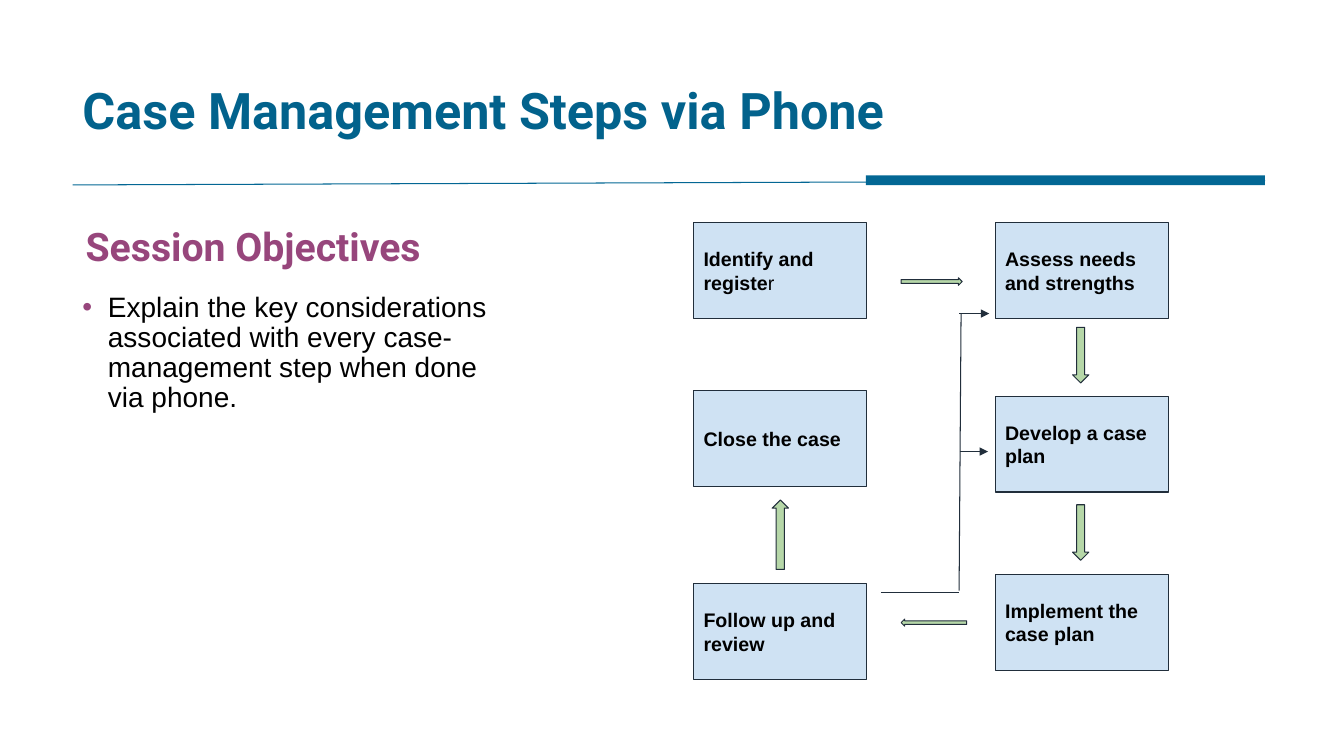
from lxml import etree
from pptx import Presentation
from pptx.dml.color import RGBColor
from pptx.enum.shapes import MSO_CONNECTOR, MSO_SHAPE
from pptx.enum.text import MSO_ANCHOR, PP_ALIGN
from pptx.oxml.ns import qn
from pptx.util import Cm, Pt

TEAL = RGBColor(0x02, 0x62, 0x8C)
BLUE = RGBColor(0x03, 0x67, 0x94)
PLUM = RGBColor(0x97, 0x46, 0x7C)
BLACK = RGBColor(0, 0, 0)
PALE = RGBColor(0xCF, 0xE2, 0xF3)
GREEN = RGBColor(0xB6, 0xD7, 0xA8)
INK = RGBColor(0x21, 0x2E, 0x3B)
RECT = MSO_SHAPE.RECTANGLE
RIGHT = MSO_SHAPE.RIGHT_ARROW
LEFT = MSO_SHAPE.LEFT_ARROW
UP = MSO_SHAPE.UP_ARROW
DOWN = MSO_SHAPE.DOWN_ARROW
STRAIGHT = MSO_CONNECTOR.STRAIGHT
TOP = MSO_ANCHOR.TOP
MIDDLE = MSO_ANCHOR.MIDDLE
ALIGN = PP_ALIGN.LEFT


def add_run(para, text, size, color, font="Arial", bold=False):
    run = para.add_run()
    run.text = text
    run.font.name = font
    run.font.size = Pt(size)
    run.font.bold = bold
    run.font.color.rgb = color


def add_text(slide, x, y, w, h, anchor=TOP):
    """Add a text box and return its first paragraph."""
    frame = slide.shapes.add_textbox(Cm(x), Cm(y), Cm(w), Cm(h)).text_frame
    frame.word_wrap = True
    frame.vertical_anchor = anchor
    para = frame.paragraphs[0]
    para.line_spacing = 0.9
    return para


def add_shape(slide, kind, x, y, w, h, fill, edge=None):
    shape = slide.shapes.add_shape(kind, Cm(x), Cm(y), Cm(w), Cm(h))
    shape.shadow.inherit = False
    shape.fill.solid()
    shape.fill.fore_color.rgb = fill
    if edge is None:
        shape.line.fill.background()
    else:
        shape.line.color.rgb = edge
        shape.line.width = Pt(0.75)
    return shape


def add_line(slide, x1, y1, x2, y2, color, arrow=False):
    line = slide.shapes.add_connector(STRAIGHT, Cm(x1), Cm(y1), Cm(x2), Cm(y2))
    line.line.color.rgb = color
    line.line.width = Pt(0.75)
    if arrow:
        tail = etree.SubElement(line.line._get_or_add_ln(), qn("a:tailEnd"))
        tail.set("type", "triangle")
    etree.SubElement(line._element.spPr, qn("a:effectLst"))


def add_head(slide, x, y, w, h):
    # Rule with a heavy right end
    add_line(slide, x, y + h - 0.04, x + w, y + h - 0.15, BLUE)
    bar = 10.06
    add_shape(slide, RECT, x + w - bar, y + h - 0.28, bar, 0.25, BLUE)
    # Title
    para = add_text(slide, x, y, w, h, MIDDLE)
    add_run(para, "Case Management Steps via Phone", 36, TEAL, "Roboto", True)


def add_goals(slide, x, y, w, h):
    # Heading
    para = add_text(slide, x + 0.08, y, w, 1.4)
    add_run(para, "Session Objectives", 28, PLUM, "Roboto", True)
    # Bullet
    para = add_text(slide, x, y + 1.65, w, h - 1.65)
    props = para._p.get_or_add_pPr()
    props.set("marL", str(Cm(0.64)))
    props.set("indent", str(-Cm(0.64)))
    tint = etree.SubElement(props, qn("a:buClr"))
    etree.SubElement(tint, qn("a:srgbClr")).set("val", str(PLUM))
    etree.SubElement(props, qn("a:buFont")).set("typeface", "Arial")
    etree.SubElement(props, qn("a:buChar")).set("char", "•")
    add_run(para, "Explain the key considerations associated with every "
            "case-management step when done via phone.", 20, BLACK)


def add_step(slide, x, y, w, h, bold, plain=""):
    frame = add_shape(slide, RECT, x, y, w, h, PALE, INK).text_frame
    frame.word_wrap = True
    frame.vertical_anchor = MIDDLE
    frame.margin_left = frame.margin_right = Cm(0.25)
    frame.margin_top = frame.margin_bottom = Cm(0.25)
    para = frame.paragraphs[0]
    para.alignment = ALIGN
    add_run(para, bold, 14, BLACK, bold=True)
    if plain:
        add_run(para, plain, 14, BLACK)


def add_flow(slide, x, y, w, h):
    # Steps, column by column
    wide, high = 4.36, 2.42
    cols = (
        (0, ((0, "Identify and registe", "r"),
             (4.23, "Close the case"),
             (h - high, "Follow up and review"))),
        (w - wide, ((0, "Assess needs and strengths"),
                    (4.37, "Develop a case plan"),
                    (8.86, "Implement the case plan"))),
    )
    for left, steps in cols:
        for top, *words in steps:
            add_step(slide, x + left, y + top, wide, high, *words)

    # Block arrows between steps
    for kind, left, top, width, height in (
            (RIGHT, 5.23, 1.39, 1.54, 0.19),
            (DOWN, 9.55, 2.64, 0.41, 1.4),
            (DOWN, 9.55, 7.11, 0.41, 1.4),
            (LEFT, 5.23, 9.99, 1.65, 0.18),
            (UP, 1.98, 6.99, 0.41, 1.75)):
        add_shape(slide, kind, x + left, y + top, width, height, GREEN, INK)

    # Loop back from follow-up to earlier steps
    for x1, y1, x2, y2, arrow in (
            (4.72, 9.33, 6.69, 9.33, False),
            (6.69, 9.27, 6.74, 2.29, False),
            (6.69, 2.29, 7.45, 2.29, True),
            (6.71, 5.77, 7.42, 5.77, True)):
        add_line(slide, x + x1, y + y1, x + x2, y + y2, INK, arrow)


def main():
    deck = Presentation()
    deck.slide_width = Cm(33.87)
    deck.slide_height = Cm(19.05)
    slide = deck.slides.add_slide(deck.slide_layouts[6])
    add_head(slide, 1.83, 1.02, 30.05, 3.68)
    add_goals(slide, 1.83, 5.61, 11.35, 7.45)
    add_flow(slide, 17.48, 5.61, 11.96, 11.52)
    deck.save("out.pptx")


if __name__ == "__main__":
    main()
